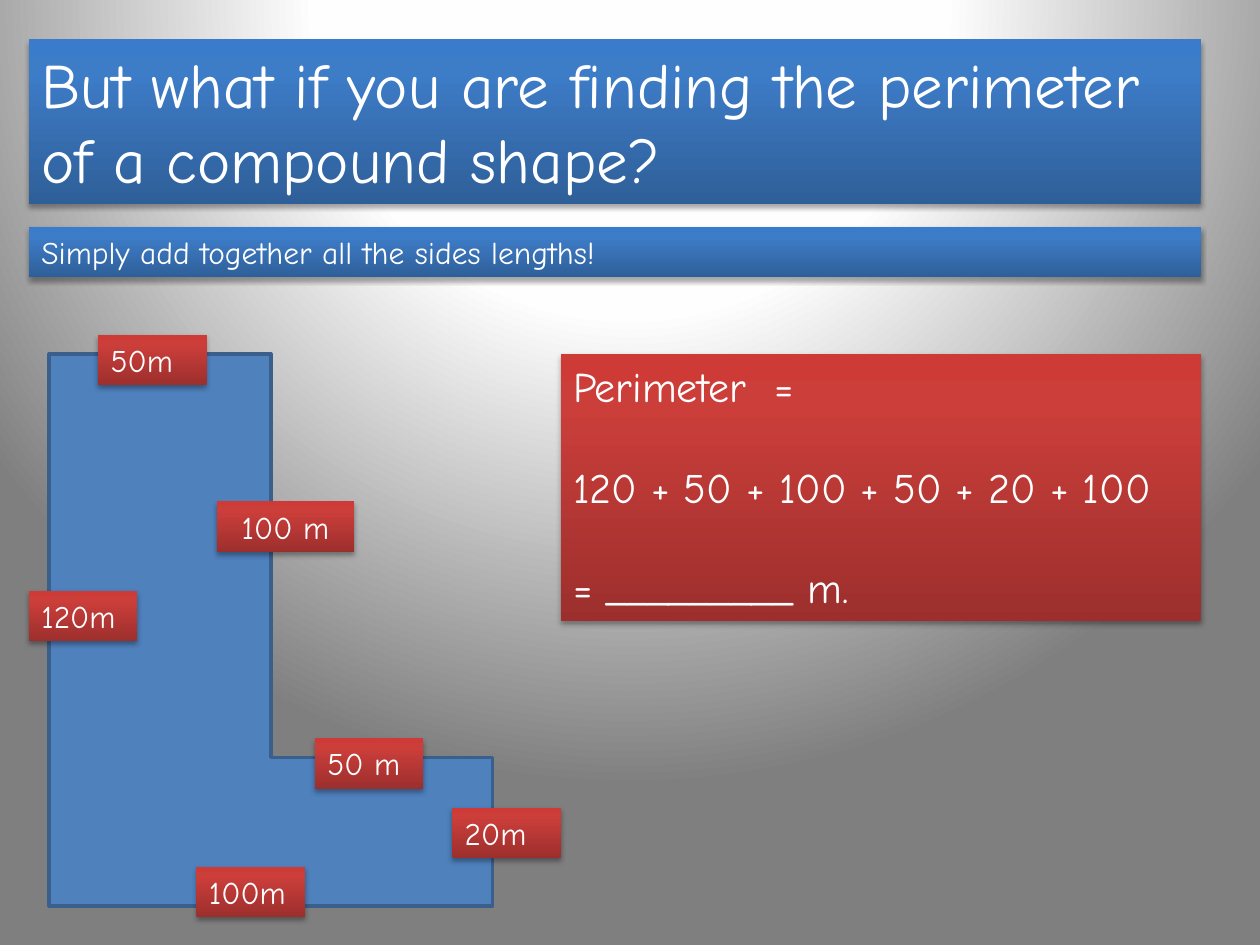
"""Build a slide on finding the perimeter of a compound shape."""
from lxml import etree
from pptx import Presentation
from pptx.dml.color import RGBColor
from pptx.enum import shapes, text
from pptx.oxml.ns import nsdecls, qn
from pptx.oxml import parse_xml
from pptx.util import Inches, Pt

FONT = "Comic Neue"
COLOURS = {"white": "FFFFFF", "shape": "4F81BD", "outline": "3A5F8C", "shadow": "000000"}
GRADIENTS = {
    "background": [(0, "FFFFFF"), (40, "FEFEFE"), (100, "7F7F7F")],
    "blue": [(0, "2F5F99"), (80, "3D7CC7"), (100, "3A7CCB")],
    "red": [(0, "9C2F2D"), (80, "CB3E3A"), (100, "CE3B37")],
}
DOWNWARD = '<a:lin ang="16200000" scaled="0"/>'
SPOTLIGHT = ('<a:path path="circle"><a:fillToRect l="50000" t="-80000" '
             'r="50000" b="180000"/></a:path>')

MARGIN, RIGHT, SHAPE_TOP = 0.23, 9.53, 2.81
LABEL_WIDTH, LABEL_HEIGHT = 0.86, 0.4
TITLE = "But what if you are finding the perimeter of a compound shape?"
RULE = "Simply add together all the sides lengths!"
SIDES = [
    ("50m", 0.78, 2.66),
    ("100m", 1.56, 6.88),
    ("50 m", 2.5, 5.86),
    ("120m", MARGIN, 4.69),
    ("20m", 3.59, 6.41),
]
WORKING = ["Perimeter\t=", "120 + 50 + 100 + 50 + 20 + 100", "= _________ m."]


def colour(name):
    return RGBColor.from_string(COLOURS[name])


def apply_gradient(fill, parent, name, direction):
    fill.solid()
    stops = "".join(f'<a:gs pos="{position * 1000}"><a:srgbClr val="{value}"/></a:gs>'
                    for position, value in GRADIENTS[name])
    gradient = parse_xml(f'<a:gradFill {nsdecls("a")} rotWithShape="1">'
                         f'<a:gsLst>{stops}</a:gsLst>{direction}</a:gradFill>')
    solid = parent.find(qn("a:solidFill"))
    parent.replace(solid, gradient)


def add_shadow(shape):
    shape.shadow.inherit = False
    effects = shape.element.spPr.find(qn("a:effectLst"))
    shadow = etree.SubElement(effects, qn("a:outerShdw"), blurRad=str(Pt(3.1)),
                              dist=str(Pt(1.8)), dir="5400000", rotWithShape="0")
    shade = etree.SubElement(shadow, qn("a:srgbClr"), val=COLOURS["shadow"])
    etree.SubElement(shade, qn("a:alpha"), val="35000")


def format_panel(shape, lines, gradient, size, align=text.PP_ALIGN.LEFT, gap=0):
    apply_gradient(shape.fill, shape.element.spPr, gradient, DOWNWARD)
    shape.line.fill.background()
    add_shadow(shape)
    frame = shape.text_frame
    frame.text = "\n".join(lines)
    frame.word_wrap = True
    frame.auto_size = text.MSO_AUTO_SIZE.SHAPE_TO_FIT_TEXT
    frame.vertical_anchor = text.MSO_ANCHOR.TOP
    for index, paragraph in enumerate(frame.paragraphs):
        paragraph.alignment = align
        if index and gap:
            paragraph.space_before = Pt(gap)
        if "\t" in lines[index]:
            tabs = etree.SubElement(paragraph._p.get_or_add_pPr(), qn("a:tabLst"))
            etree.SubElement(tabs, qn("a:tab"), pos=str(Inches(1.6)), algn="l")
        paragraph.font.name = FONT
        paragraph.font.size = Pt(size)
        paragraph.font.color.rgb = colour("white")


def add_panel(slide, box, lines, gradient, size, **options):
    shape = slide.shapes.add_textbox(*map(Inches, box))
    format_panel(shape, lines, gradient, size, **options)


def add_compound_shape(slide):
    box = map(Inches, (0.39, SHAPE_TOP, 3.52, 4.38))
    shape = slide.shapes.add_shape(shapes.MSO_SHAPE.CORNER, *box)
    shape.adjustments[0], shape.adjustments[1] = 0.335, 0.5
    shape.fill.solid()
    shape.fill.fore_color.rgb = colour("shape")
    shape.line.color.rgb = colour("outline")
    shape.line.width = Pt(2)
    shape.shadow.inherit = False


def main():
    presentation = Presentation()
    presentation.slide_width, presentation.slide_height = Inches(10), Inches(7.5)
    slide = presentation.slides.add_slide(presentation.slide_layouts[5])
    fill = slide.background.fill
    apply_gradient(fill, slide.element.cSld.bg.bgPr, "background", SPOTLIGHT)

    title = slide.shapes.title
    title.left, title.top = Inches(MARGIN), Inches(0.31)
    title.width, title.height = Inches(RIGHT - MARGIN), Inches(1.31)
    format_panel(title, [TITLE], "blue", 36)
    add_panel(slide, (MARGIN, 1.8, RIGHT - MARGIN, LABEL_HEIGHT), [RULE], "blue", 18)

    add_compound_shape(slide)
    for label, left, top in SIDES:
        add_panel(slide, (left, top, LABEL_WIDTH, LABEL_HEIGHT), [label], "red", 18)
    add_panel(slide, (1.72, 3.98, 1.09, LABEL_HEIGHT), ["100 m"], "red", 18,
              align=text.PP_ALIGN.CENTER)
    add_panel(slide, (4.45, SHAPE_TOP, RIGHT - 4.45, 2.12), WORKING, "red", 24, gap=28.8)
    presentation.save("out.pptx")


if __name__ == "__main__":
    main()
